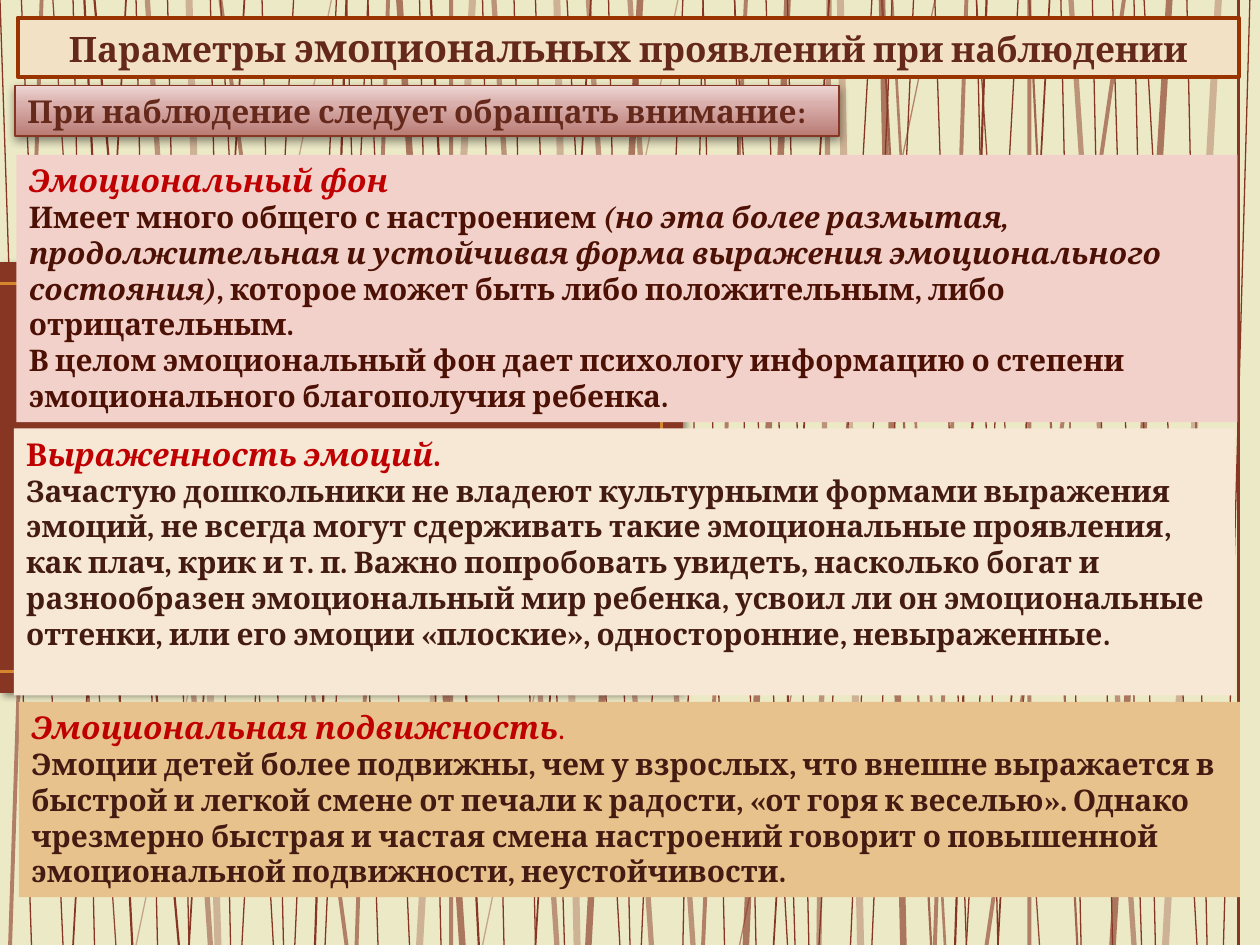
from copy import deepcopy
from lxml import etree
from pptx import Presentation
from pptx.dml.color import RGBColor
from pptx.enum.shapes import MSO_CONNECTOR, MSO_SHAPE
from pptx.enum.text import MSO_ANCHOR, MSO_AUTO_SIZE, PP_ALIGN
from pptx.oxml.ns import qn
from pptx.util import Pt

LINE = MSO_CONNECTOR.STRAIGHT
RECT = MSO_SHAPE.RECTANGLE
TOP = MSO_ANCHOR.TOP
FIXED = MSO_AUTO_SIZE.NONE
LEFT, CENTER = PP_ALIGN.LEFT, PP_ALIGN.CENTER
SCALE = 9144
WIDE, HIGH = 1000, 750

THEME = {
    "font": "Cambria", "back": "ECE9C6", "stem": "873624", "gold": "D6862D",
    "rose": "F1D1C9", "cream": "F7E7D5", "sand": "E7C28D",
    "title": "F3E1C6", "rim": "993300", "shade": "000000",
    "fade": [(0, "B97B74"), (0.65, "DAB0AD"), (1, "EDD6D4")],
}

STYLES = {
    "head": dict(size=18, color="C00000", bold=True, italic=True),
    "mark": dict(size=18, color="C00000", bold=True, italic=False),
    "dot": dict(size=18, color="C00000", bold=False, italic=False),
    "dark": dict(size=17, color="4C1004", bold=True, italic=False),
    "aside": dict(size=17, color="4C1004", bold=True, italic=True),
    "body": dict(size=17, color="441B12", bold=True, italic=False),
    "title": dict(size=20, color="65291B", bold=True, italic=False),
    "big": dict(size=22, color="65291B", bold=True, italic=False),
    "lead": dict(size=18, color="65291B", bold=True, italic=False),
}

STEMS = [
    (0.75, 100, [
        (208, 225), (175, 217), (233, 192), (0, 25), (17, 50), (167, 183),
        (58, 75), (267, 234), (292, 258), (108, 125), (133, 150), (483, 500),
        (450, 492), (275, 300), (292, 325), (333, 350), (542, 509),
        (558, 542), (425, 448), (383, 400), (408, 425), (583, 625),
        (692, 650), (625, 642), (725, 692), (708, 675), (608, 631),
        (558, 575), (583, 600), (742, 767), (775, 792), (842, 858),
        (867, 883), (942, 958), (908, 950), (900, 917), (992, 971),
        (883, 906), (808, 767)]),
    (0.75, 90, [(42, 92), (775, 825)]),
    (0.75, 39, [(263, 108), (538, 383)]),
    (0.75, 56, [(742, 587)]),
    (1, 100, [(100, 58), (194, 150), (469, 425), (658, 614), (833, 792)]),
    (1.25, 100, [(75, 142), (67, 105), (275, 250), (342, 380), (783, 758),
                 (983, 983)]),
    (1.25, 72, [(817, 855), (700, 739)]),
    (1.5, 58, [(708, 750)]),
    (2.25, 58, [(33, 8), (175, 275), (308, 283), (358, 358), (592, 558),
                (767, 742), (817, 817), (892, 783)]),
    (3, 47, [(117, 167), (392, 442), (467, 517), (850, 900), (658, 650),
             (500, 550)]),
    (3.75, 63, [(508, 467), (317, 367), (928, 883), (700, 717), (625, 592)]),
    (4, 30, [(150, 173), (375, 333), (442, 458), (667, 683), (967, 925)]),
]

BLOCK = (0, 208, 542, 342)
TRIM = [(0, 225, 525, 225), (0, 533, 525, 533), (525, 225, 525, 533)]

PANELS = [
    dict(at=(13, 123, 969, 212), fill="rose", text=[
        [("Эмоциональный фон", "head")],
        [("Имеет много общего с настроением ", "dark"),
         ("(но эта более размытая, продолжительная и устойчивая форма "
          "выражения эмоционального состояния)", "aside"),
         (", которое может быть либо положительным, либо отрицательным.",
          "dark")],
        [("В целом эмоциональный фон дает психологу информацию о степени "
          "эмоционального благополучия ребенка.", "dark")]]),
    dict(at=(11, 340, 969, 212), fill="cream", text=[
        [("В", "mark"), ("ыраженность эмоций", "head"), (".", "mark")],
        [("Зачастую дошкольники не владеют культурными формами выражения "
          "эмоций, не всегда могут сдерживать такие эмоциональные "
          "проявления, как плач, крик и т. п. Важно попробовать увидеть, "
          "насколько богат и разнообразен эмоциональный мир ребенка, усвоил "
          "ли он эмоциональные оттенки, или его эмоции «плоские», "
          "односторонние, невыраженные.", "body")]]),
    dict(at=(15, 557, 969, 155), fill="sand", text=[
        [("Эмоциональная подвижность", "head"), (".", "dot")],
        [("Эмоции детей более подвижны, чем у взрослых, что внешне "
          "выражается в быстрой и легкой смене от печали к радости, «от горя "
          "к веселью». Однако чрезмерно быстрая и частая смена настроений "
          "говорит о повышенной эмоциональной подвижности, неустойчивости.",
          "body")]]),
    dict(at=(14, 14, 969, 47), fill="title", line=("rim", 2.25),
         align=CENTER, text=[
        [("Параметры ", "title"), ("эмоциональных", "big"),
         (" проявлений при наблюдении", "title")]]),
    dict(at=(12, 68, 654, 40), fill="fade", line=("stem", 0.75),
         shadow=(43, 5, 2, 90), text=[
        [("При наблюдение следует обращать внимание:", "lead")]]),
]


def px(*nums):
    return [n * SCALE for n in nums]


def rgb(name):
    return RGBColor.from_string(THEME.get(name, name))


def add_line(slide, ends, color, width, alpha=100):
    line = slide.shapes.add_connector(LINE, *px(*ends))
    line.line.color.rgb = rgb(color)
    line.line.width = Pt(width)
    props = line._element.spPr
    if alpha < 100:
        tint = next(props.iter(qn("a:srgbClr")))
        etree.SubElement(tint, qn("a:alpha"), val=str(alpha * 1000))
    etree.SubElement(props, qn("a:effectLst"))


def add_shadow(shape, alpha, blur, dist, angle):
    shape.shadow.inherit = False
    effects = shape._element.spPr.find(qn("a:effectLst"))
    outer = etree.SubElement(
        effects, qn("a:outerShdw"), blurRad=str(Pt(blur)), dist=str(Pt(dist)),
        dir=str(angle * 60000), algn="tl", rotWithShape="0")
    tint = etree.SubElement(outer, qn("a:srgbClr"), val=THEME["shade"])
    etree.SubElement(tint, qn("a:alpha"), val=str(alpha * 1000))


def paint(shape, name):
    if name != "fade":
        shape.fill.solid()
        shape.fill.fore_color.rgb = rgb(name)
        return
    shape.fill.gradient()
    shape.fill.gradient_angle = 90
    stops = next(shape._element.spPr.iter(qn("a:gsLst")))
    stops.append(deepcopy(stops[0]))
    for stop, (place, color) in zip(shape.fill.gradient_stops, THEME["fade"]):
        stop.position = place
        stop.color.rgb = rgb(color)


def add_panel(slide, at, fill, text, line=None, shadow=None, align=LEFT):
    box = slide.shapes.add_textbox(*px(*at))
    paint(box, fill)
    if line:
        box.line.color.rgb = rgb(line[0])
        box.line.width = Pt(line[1])
    if shadow:
        add_shadow(box, *shadow)
    frame = box.text_frame
    form = dict(word_wrap=True, auto_size=FIXED, vertical_anchor=TOP)
    for key, val in form.items():
        setattr(frame, key, val)
    for num, parts in enumerate(text):
        para = frame.add_paragraph() if num else frame.paragraphs[0]
        para.alignment = align
        for words, kind in parts:
            run = para.add_run()
            run.text = words
            look = dict(STYLES[kind], name=THEME["font"])
            run.font.color.rgb = rgb(look.pop("color"))
            look["size"] = Pt(look["size"])
            for key, val in look.items():
                setattr(run.font, key, val)


def main():
    deck = Presentation()
    deck.slide_width, deck.slide_height = px(WIDE, HIGH)
    slide = deck.slides.add_slide(deck.slide_layouts[6])
    slide.background.fill.solid()
    slide.background.fill.fore_color.rgb = rgb("back")
    for width, alpha, pairs in STEMS:
        for top, foot in pairs:
            add_line(slide, (top, 0, foot, HIGH), "stem", width, alpha)
    block = slide.shapes.add_shape(RECT, *px(*BLOCK))
    paint(block, "stem")
    block.line.fill.background()
    add_shadow(block, 40, 4, 3, 45)
    for ends in TRIM:
        add_line(slide, ends, "gold", 1.5)
    for panel in PANELS:
        add_panel(slide, **panel)
    deck.save("out.pptx")


if __name__ == "__main__":
    main()
